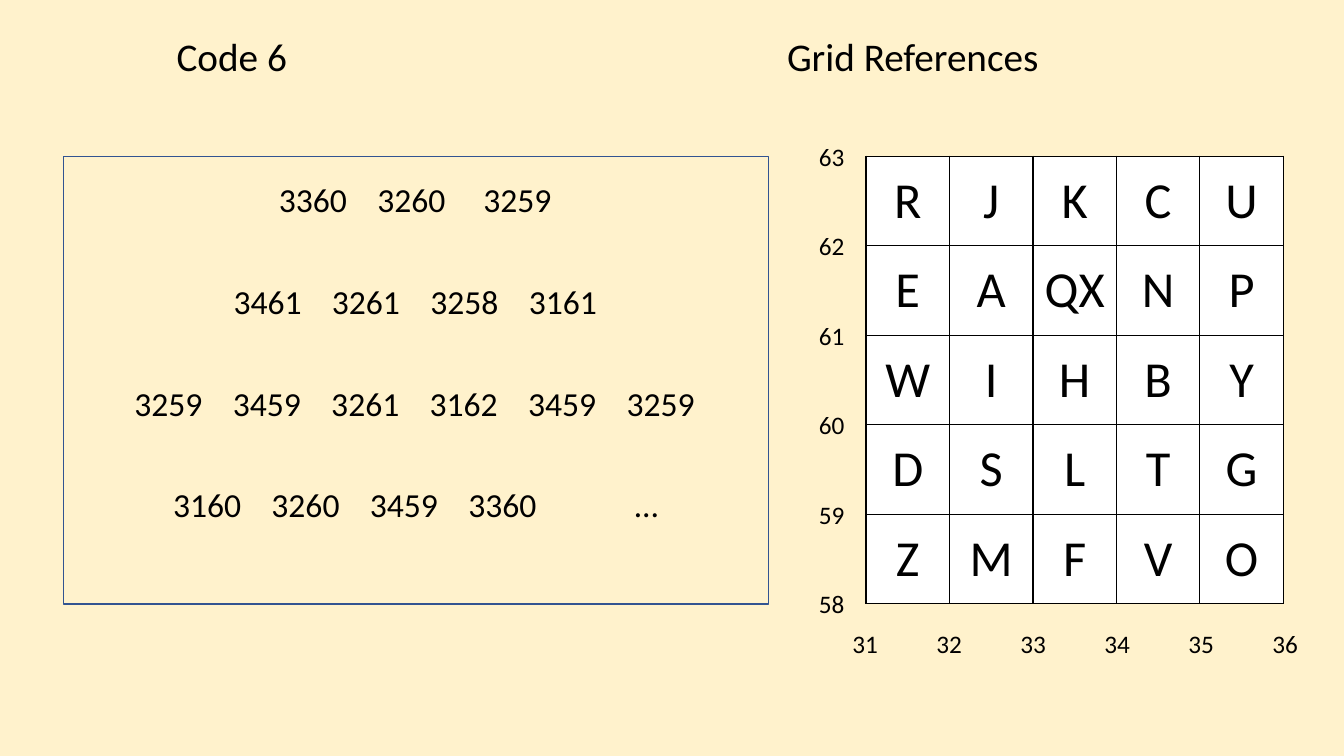
from pptx import Presentation
from pptx.dml.color import RGBColor
from pptx.enum.shapes import MSO_SHAPE
from pptx.enum.text import MSO_ANCHOR, MSO_AUTO_SIZE, PP_ALIGN
from pptx.oxml.ns import qn
from pptx.util import Inches, Pt
from lxml import etree

RECT = MSO_SHAPE.RECTANGLE
MID = MSO_ANCHOR.MIDDLE
GROW = MSO_AUTO_SIZE.SHAPE_TO_FIT_TEXT
LEFT, CENTER = PP_ALIGN.LEFT, PP_ALIGN.CENTER

HUES = {"sand": "FFF2CC", "ink": "000000", "white": "FFFFFF", "blue": "325491"}
FONT = "Calibri"
COLS, ROWS = 160, 90
TOP, TALL = 18.6, 53.3
GRID_X, GRID_W = 103.1, 49.7
CODE_X, CODE_W = 7.56, 83.9
STEP = 11.72

LETTERS = [
    ["R", "J", "K", "C", "U"],
    ["E", "A", "QX", "N", "P"],
    ["W", "I", "H", "B", "Y"],
    ["D", "S", "L", "T", "G"],
    ["Z", "M", "F", "V", "O"],
]
CODES = [
    (33.2, 0.9, ["3360", "3260", "3259"]),
    (27.8, 0, ["3461", "3261", "3258", "3161"]),
    (16, 0, ["3259", "3459", "3261", "3162", "3459", "3259"]),
    (20.6, 8.1, ["3160", "3260", "3459", "3360", "…"]),
]


def unit(n):
    return Inches(n * 7.5 / ROWS)


def tint(name):
    return RGBColor.from_string(HUES[name])


def write(frame, text, size=18, hue="ink", align=CENTER, stops=()):
    para = frame.paragraphs[0]
    para.alignment = align
    if stops:
        tabs = etree.SubElement(para._p.get_or_add_pPr(), qn("a:tabLst"))
        for stop in stops:
            etree.SubElement(tabs, qn("a:tab"), pos=str(unit(stop)), algn="l")
    run = para.add_run()
    run.text = text
    run.font.name = FONT
    run.font.size = Pt(size)
    run.font.color.rgb = tint(hue)


class Deck:
    """Draws styled elements on one slide, measured in grid columns and rows."""

    def __init__(self):
        self.file = Presentation()
        self.file.slide_width, self.file.slide_height = unit(COLS), unit(ROWS)
        self.slide = self.file.slides.add_slide(self.file.slide_layouts[6])
        back = self.slide.background.fill
        back.solid()
        back.fore_color.rgb = tint("sand")

    def text(self, x, y, w, h, words, pad=None, **style):
        box = self.slide.shapes.add_textbox(*map(unit, (x, y, w, h)))
        frame = box.text_frame
        frame.word_wrap = True
        frame.auto_size = GROW
        if pad is not None:
            frame.margin_left = unit(pad)
        write(frame, words, **style)

    def panel(self, x, y, w, h):
        box = self.slide.shapes.add_shape(RECT, *map(unit, (x, y, w, h)))
        box.shadow.inherit = False
        box.fill.solid()
        box.fill.fore_color.rgb = tint("sand")
        box.line.color.rgb = tint("blue")
        box.line.width = Pt(1)

    def edge(self, cell):
        props = cell._tc.get_or_add_tcPr()
        for side in "LRTB":
            line = etree.SubElement(props, qn("a:ln" + side), w=str(Pt(1)))
            fill = etree.SubElement(line, qn("a:solidFill"))
            etree.SubElement(fill, qn("a:srgbClr"), val=HUES["ink"])

    def table(self, x, y, w, h, data, size):
        place = map(unit, (x, y, w, h))
        grid = self.slide.shapes.add_table(len(data), len(data[0]), *place).table
        grid.first_row = grid.horz_banding = False
        for r, row in enumerate(data):
            for c, word in enumerate(row):
                cell = grid.cell(r, c)
                self.edge(cell)
                cell.fill.solid()
                cell.fill.fore_color.rgb = tint("white")
                cell.vertical_anchor = MID
                write(cell.text_frame, word, size=size)


def main():
    deck = Deck()
    deck.table(GRID_X, TOP, GRID_W, TALL, LETTERS, 36)
    deck.text(3.24, 3.24, 48.72, 6.84, "Code 6", size=28)
    deck.text(61.68, 3.24, 93.96, 6.84, "Grid References", size=28)
    for i in range(6):
        deck.text(99.7 + i * 10, 74.16, 6.6, 4.8, str(31 + i))
        deck.text(95.7, 16.2 + i * TALL / 5, 6.6, 4.8, str(63 - i))
    deck.panel(CODE_X, TOP, CODE_W, TALL)
    for i, (start, extra, codes) in enumerate(CODES):
        stops = [STEP * n for n in range(1, len(codes))]
        stops[-1] += extra
        deck.text(CODE_X, 20.76 + i * 12.1, CODE_W, 6, "\t".join(codes),
                  pad=start - CODE_X, size=24, align=LEFT, stops=stops)
    deck.file.save("out.pptx")


if __name__ == "__main__":
    main()
